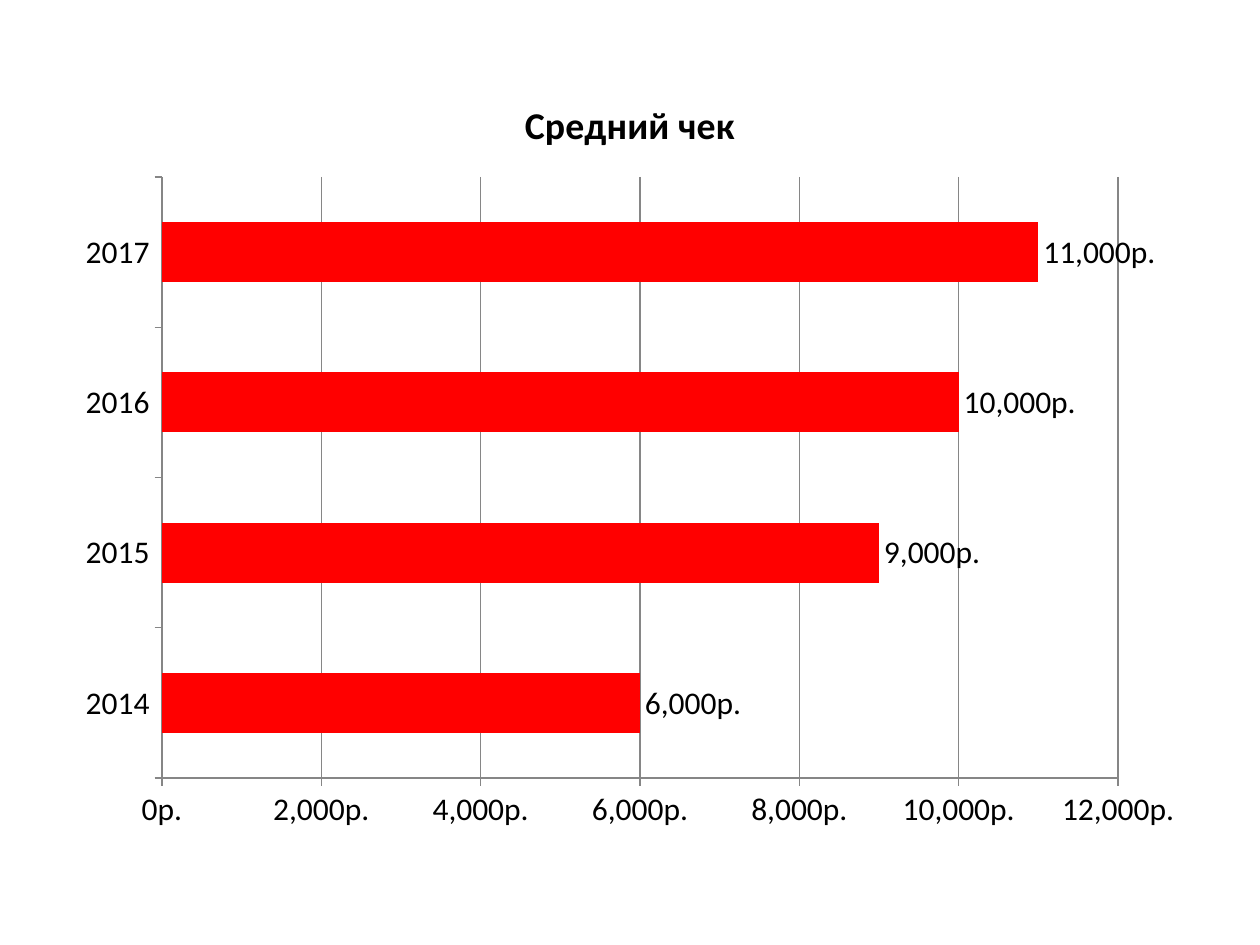
import pptx
import pptx.chart.data
import pptx.dml.color
import pptx.enum.chart
import pptx.util
from pptx.util import Inches

COLORS = {"text": "000000", "bar": "FF0000", "line": "868686"}
CHART_TITLE = "Средний чек"
NUMBER_FORMAT = '#,##0"р."'
AVERAGE_CHECKS = {"2014": 6000, "2015": 9000, "2016": 10000, "2017": 11000}


def color(name):
    return pptx.dml.color.RGBColor.from_string(COLORS[name])


def set_attributes(target, values):
    for name, value in values.items():
        setattr(target, name, value)


def format_font(font, size, bold=False):
    set_attributes(font, {"name": "Calibri", "size": pptx.util.Pt(size), "bold": bold})
    font.color.rgb = color("text")


def format_line(line):
    line.color.rgb = color("line")
    line.width = pptx.util.Pt(0.75)


def add_bar_chart(slide):
    data = pptx.chart.data.CategoryChartData(number_format=NUMBER_FORMAT)
    data.categories = list(AVERAGE_CHECKS)
    data.add_series(CHART_TITLE, list(AVERAGE_CHECKS.values()))
    frame = slide.shapes.add_chart(
        pptx.enum.chart.XL_CHART_TYPE.BAR_CLUSTERED,
        Inches(0.5), Inches(0.55), Inches(9), Inches(6.15), data,
    )
    chart = frame.chart
    chart.has_legend = False
    format_font(chart.font, 18)
    return chart


def format_title(chart):
    chart.has_title = True
    chart.chart_title.include_in_layout = False
    paragraph = chart.chart_title.text_frame.paragraphs[0]
    run = paragraph.add_run()
    run.text = CHART_TITLE
    format_font(run.font, 21.6, bold=True)


def format_axes(chart):
    tick_marks = pptx.enum.chart.XL_TICK_MARK
    for axis in (chart.category_axis, chart.value_axis):
        set_attributes(axis, {
            "major_tick_mark": tick_marks.OUTSIDE,
            "minor_tick_mark": tick_marks.NONE,
        })
        format_line(axis.format.line)
    value_axis = chart.value_axis
    set_attributes(value_axis, {
        "minimum_scale": 0,
        "maximum_scale": 12000,
        "major_unit": 2000,
        "has_major_gridlines": True,
    })
    format_line(value_axis.major_gridlines.format.line)
    set_attributes(value_axis.tick_labels, {
        "number_format": NUMBER_FORMAT,
        "number_format_is_linked": False,
    })


def format_bars(chart):
    plot = chart.plots[0]
    set_attributes(plot, {
        "gap_width": 150,
        "vary_by_categories": False,
        "has_data_labels": True,
    })
    fill = plot.series[0].format.fill
    fill.solid()
    fill.fore_color.rgb = color("bar")
    set_attributes(plot.data_labels, {
        "show_value": True,
        "number_format": NUMBER_FORMAT,
        "number_format_is_linked": False,
        "position": pptx.enum.chart.XL_LABEL_POSITION.OUTSIDE_END,
    })
    format_font(plot.data_labels.font, 18)


def main():
    presentation = pptx.Presentation()
    set_attributes(presentation, {"slide_width": Inches(10), "slide_height": Inches(7.5)})
    slide = presentation.slides.add_slide(presentation.slide_layouts[6])
    chart = add_bar_chart(slide)
    format_title(chart)
    format_axes(chart)
    format_bars(chart)
    presentation.save("out.pptx")


if __name__ == "__main__":
    main()
